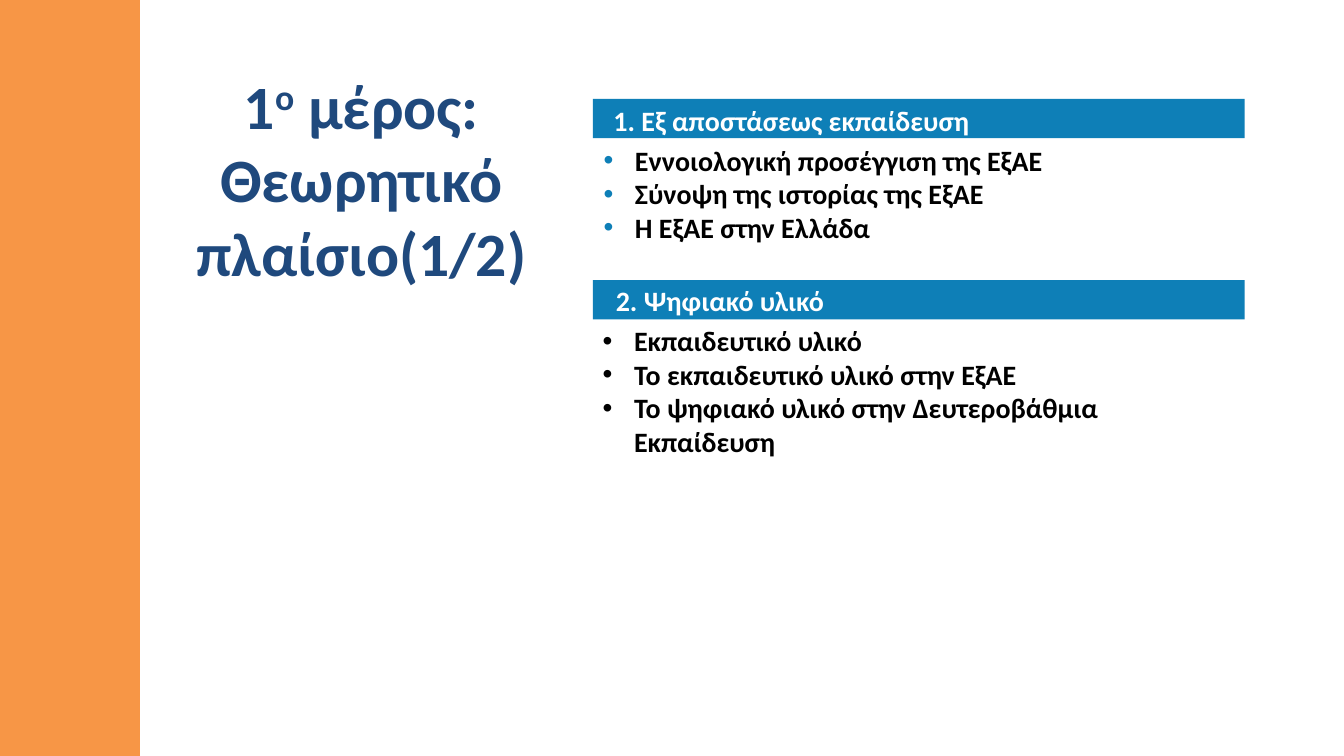
from lxml import etree
from pptx import Presentation
from pptx.dml.color import RGBColor
from pptx.enum.shapes import MSO_SHAPE
from pptx.enum.text import MSO_ANCHOR, PP_ALIGN
from pptx.oxml.ns import qn
from pptx.util import Cm, Pt

RECTANGLE = MSO_SHAPE.RECTANGLE
TOP, MIDDLE = MSO_ANCHOR.TOP, MSO_ANCHOR.MIDDLE
LEFT, CENTER = PP_ALIGN.LEFT, PP_ALIGN.CENTER
ORANGE, BLUE, NAVY = "F79646", "0E7FB7", "1F497D"
WHITE, BLACK = "FFFFFF", "000000"

presentation = Presentation()
presentation.slide_width = Cm(33.87)
presentation.slide_height = Cm(19.05)
slide = presentation.slides.add_slide(presentation.slide_layouts[6])


def add_bar(left, top, width, height, color):
    shape = slide.shapes.add_shape(RECTANGLE, Cm(left), Cm(top), Cm(width), Cm(height))
    shape.shadow.inherit = False
    shape.fill.solid()
    shape.fill.fore_color.rgb = RGBColor.from_string(color)
    shape.line.fill.background()


def add_text(paragraphs, left, top, width, height, size=20, color=BLACK,
             anchor=TOP, align=LEFT, space_before=0, bullet=None):
    text_frame = slide.shapes.add_textbox(Cm(left), Cm(top), Cm(width), Cm(height)).text_frame
    text_frame.word_wrap = True
    text_frame.vertical_anchor = anchor
    for index, runs in enumerate(paragraphs):
        paragraph = text_frame.add_paragraph() if index else text_frame.paragraphs[0]
        paragraph.alignment = align
        paragraph.space_before = Pt(space_before)
        if bullet:
            properties = paragraph._p.get_or_add_pPr()
            properties.set("marL", str(Cm(0.79)))
            properties.set("indent", str(-Cm(0.79)))
            bullet_color = etree.SubElement(properties, qn("a:buClr"))
            etree.SubElement(bullet_color, qn("a:srgbClr"), val=bullet)
            etree.SubElement(properties, qn("a:buFont"), typeface="Arial")
            etree.SubElement(properties, qn("a:buChar"), char="•")
        for text, baseline in runs:
            run = paragraph.add_run()
            run.text = text
            run.font.name = "Calibri"
            run.font.size = Pt(size)
            run.font.bold = True
            run.font.color.rgb = RGBColor.from_string(color)
            if baseline:
                run._r.get_or_add_rPr().set("baseline", str(baseline * 1000))


add_bar(0, 0, 3.53, 19.05, ORANGE)

sections = [
    ("1. Εξ αποστάσεως εκπαίδευση", 2.49, 15.21, 2.64, 14.96, 3.48, 4.37, BLUE,
     ["Εννοιολογική προσέγγιση της ΕξΑΕ", "Σύνοψη της ιστορίας της ΕξΑΕ",
      "Η ΕξΑΕ στην Ελλάδα"]),
    ("2. Ψηφιακό υλικό", 7.06, 15.27, 7.16, 14.94, 8.03, 3.68, BLACK,
     ["Εκπαιδευτικό υλικό", "Το εκπαιδευτικό υλικό στην ΕξΑΕ",
      "Το ψηφιακό υλικό στην Δευτεροβάθμια Εκπαίδευση"]),
]
for (heading, bar_top, heading_left, heading_top,
     list_left, list_top, list_height, bullet, topics) in sections:
    add_bar(14.94, bar_top, 16.43, 0.99, BLUE)
    add_text([[(heading, 0)]], heading_left, heading_top, 11.43, 0.79,
             color=WHITE, anchor=MIDDLE, space_before=4)
    add_text([[(topic, 0)] for topic in topics], list_left, list_top, 15.95, list_height,
             bullet=bullet)

add_text([[("1", 0), ("ο", 30), (" μέρος:", 0)], [("Θεωρητικό πλαίσιο(1/2)", 0)]],
         3.28, 1.55, 11.66, 5.89, size=44, color=NAVY, anchor=MIDDLE, align=CENTER)

presentation.save("out.pptx")
